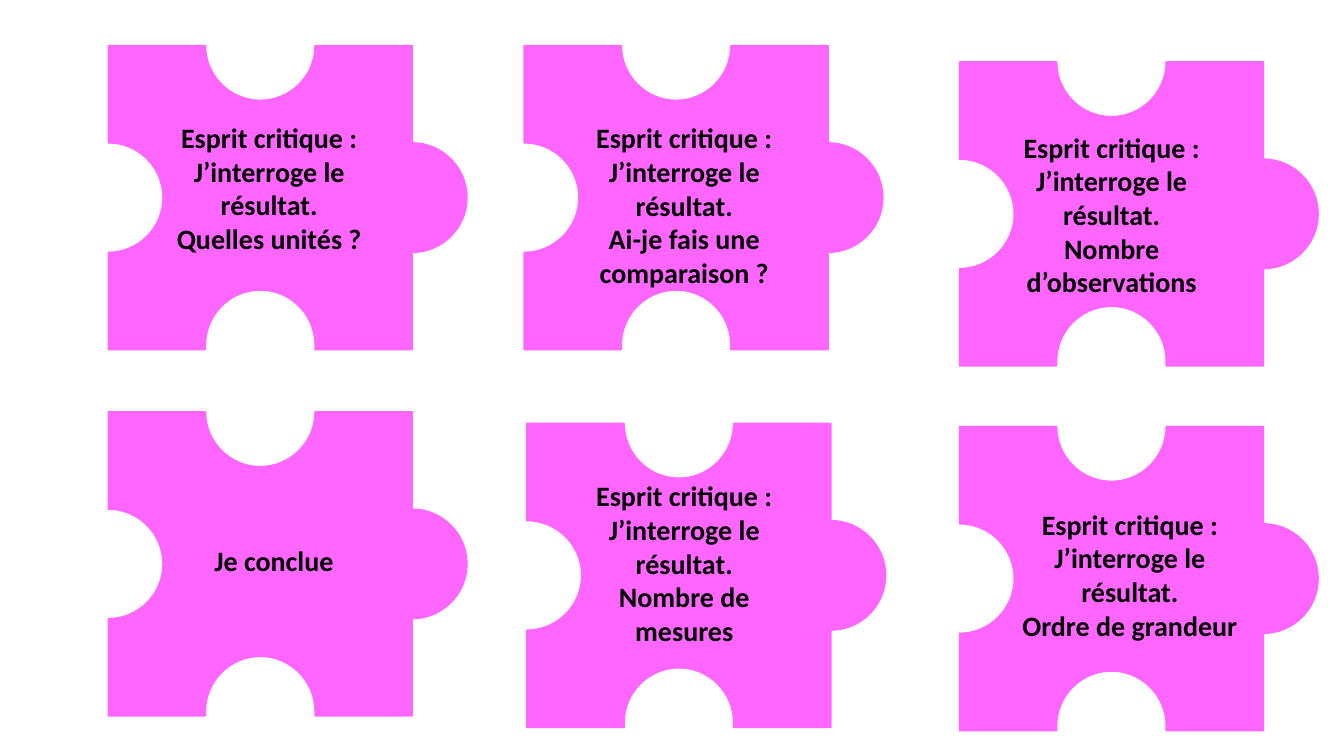
from math import cos, radians, sin

from lxml import etree
from pptx import Presentation
from pptx.dml.color import RGBColor
from pptx.enum.text import MSO_AUTO_SIZE, PP_ALIGN
from pptx.oxml.ns import qn
from pptx.util import Cm, Pt

CENTER = PP_ALIGN.CENTER
FIT_SHAPE = MSO_AUTO_SIZE.SHAPE_TO_FIT_TEXT
COLORS = {"piece": "FF66FF", "text": "000000"}

# Puzzle piece, in cm: side of the square, its middle, radius of tab and sockets
SIDE = 7.66
MID = SIDE / 2
RADIUS = 1.38
BOTTOM_SOCKET_Y = 7.54
HANDLE = 0.55 * RADIUS

PIECE_CORNERS = [
    (2.73, 10.38), (13.28, 10.67), (24.18, 1.56),
    (13.21, 1.15), (2.73, 1.15), (24.18, 10.75),
]

TEXT_WIDTH = 6.05
QUESTION = ["Esprit critique :", "J’interroge le résultat."]

# Left, top and height of each text; paragraphs
TEXTS = [
    (25.45, 12.66, 3.68, QUESTION + ["Ordre de grandeur"]),
    (14.22, 11.94, 4.53, QUESTION + ["Nombre de mesures"]),
    (24.99, 3.16, 4.53, QUESTION + ["Nombre d’observations"]),
    (14.22, 2.92, 4.53, QUESTION + ["Ai-je fais une comparaison ?"]),
    (3.76, 2.91, 3.68, QUESTION + ["Quelles unités ?"]),
    (3.88, 13.56, 1.11, ["Je conclue"]),
]


def half_circle(cx, cy, start, turn):
    """Two Bézier quarters from the start angle, clockwise if turn is 1, else -1."""
    quarters = []
    for angle in (start, start + 90 * turn):
        a, b = radians(angle), radians(angle + 90 * turn)
        x1, y1 = cx + RADIUS * cos(a), cy + RADIUS * sin(a)
        x2, y2 = cx + RADIUS * cos(b), cy + RADIUS * sin(b)
        h = HANDLE * turn
        quarters.append([(x1 - h * sin(a), y1 + h * cos(a)),
                         (x2 + h * sin(b), y2 - h * cos(b)), (x2, y2)])
    return quarters


def add_outline(shapes, left, top, segments):
    """Draw segments of one point (line) or three points (Bézier curve)."""
    points = [(Cm(left + x), Cm(top + y)) for segment in segments for x, y in segment]
    builder = shapes.build_freeform(*points[0])
    builder.add_line_segments(points[1:], close=True)
    sp = builder.convert_to_shape()
    lines = iter(list(sp.element.iter(qn("a:lnTo"))))
    for segment in segments[1:]:
        line = next(lines)
        if len(segment) == 3:
            curve = etree.Element(qn("a:cubicBezTo"))
            line.addprevious(curve)
            for part in (line, next(lines), next(lines)):
                curve.append(part[0])
                part.getparent().remove(part)
    sp.shadow.inherit = False
    sp.fill.solid()
    sp.fill.fore_color.rgb = RGBColor.from_string(COLORS["piece"])
    sp.line.color.rgb = RGBColor.from_string(COLORS["piece"])
    sp.line.width = Pt(1)
    return sp


tab_top, tab_bottom = [(SIDE, MID - RADIUS)], [(SIDE, MID + RADIUS)]
tab_inner = [tab_top, tab_bottom, *half_circle(SIDE, MID, 90, 1)]
tab_outer = [tab_top, *half_circle(SIDE, MID, -90, 1)]
body = [
    [(0, 0)], [(MID - RADIUS, 0)], *half_circle(MID, 0, 180, -1),
    [(SIDE, 0)], tab_top, *half_circle(SIDE, MID, -90, -1),
    [(SIDE, SIDE)], [(MID + RADIUS, SIDE)], [(MID + RADIUS, BOTTOM_SOCKET_Y)],
    *half_circle(MID, BOTTOM_SOCKET_Y, 0, -1),
    [(MID - RADIUS, SIDE)], [(0, SIDE)], [(0, MID + RADIUS)],
    *half_circle(0, MID, 90, -1),
]

prs = Presentation()
prs.slide_width, prs.slide_height = Cm(33.87), Cm(19.05)
s = prs.slides.add_slide(prs.slide_layouts[6])

for left, top in PIECE_CORNERS:
    parts = [add_outline(s.shapes, left, top, part) for part in (tab_inner, body, tab_outer)]
    s.shapes.add_group_shape(parts)

for left, top, height, paragraphs in TEXTS:
    box = s.shapes.add_textbox(Cm(left), Cm(top), Cm(TEXT_WIDTH), Cm(height))
    tf = box.text_frame
    tf.word_wrap = True
    tf.auto_size = FIT_SHAPE
    for i, text in enumerate(paragraphs):
        p = tf.add_paragraph() if i else tf.paragraphs[0]
        p.alignment = CENTER
        r = p.add_run()
        r.text = text
        r.font.name = "Calibri"
        r.font.size = Pt(20)
        r.font.bold = True
        r.font.color.rgb = RGBColor.from_string(COLORS["text"])

prs.save("out.pptx")
